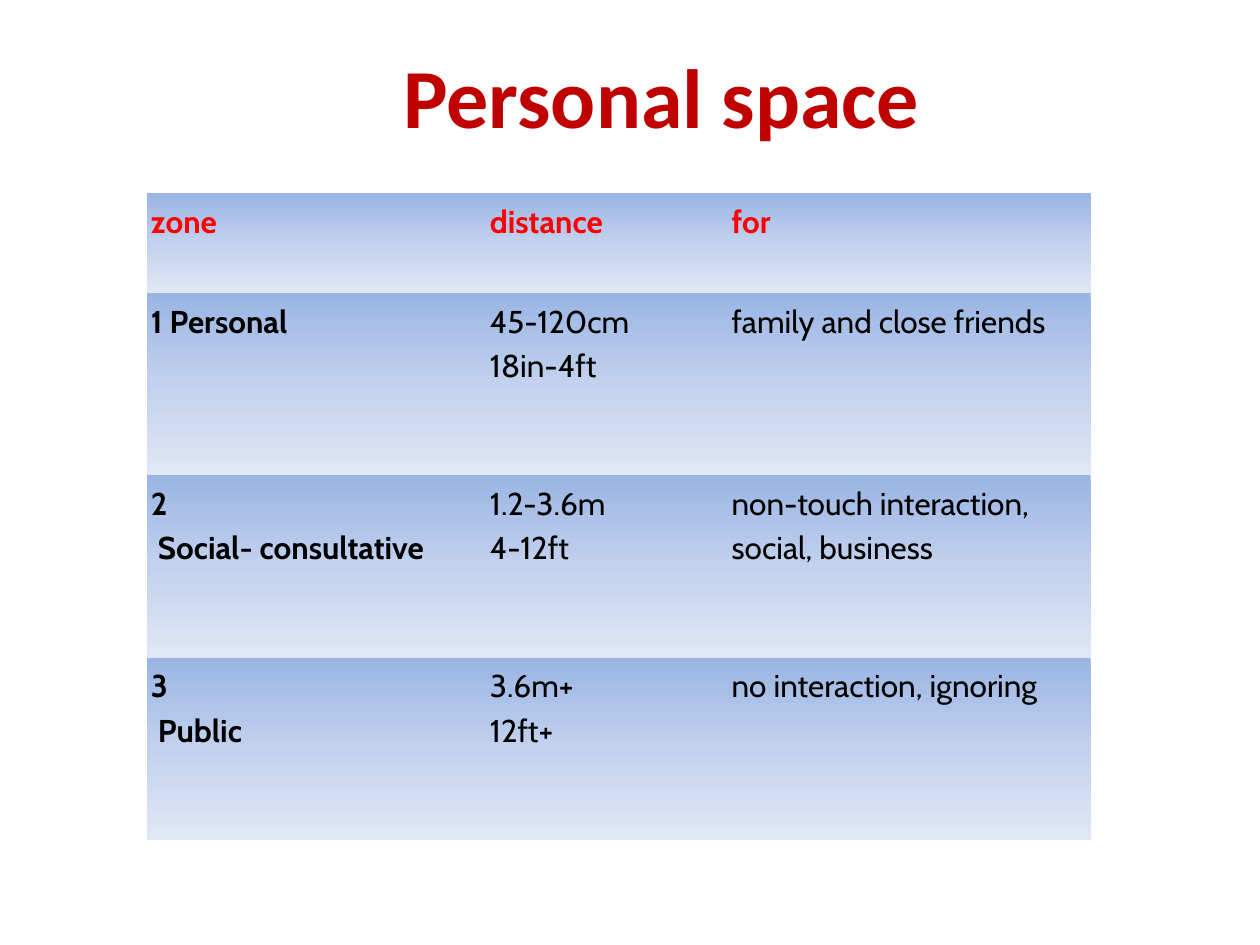
"""Build a slide with a table of personal space zones."""
from dataclasses import dataclass

from lxml import etree
from pptx import Presentation
from pptx.dml.color import RGBColor
from pptx.enum import text
from pptx.oxml import ns
from pptx.util import Pt

DARK_RED = RGBColor(0xC0, 0x00, 0x00)
RED = RGBColor(0xFF, 0x00, 0x00)
BLACK = RGBColor(0x00, 0x00, 0x00)
GRADIENT = (
    (0, RGBColor(0x9A, 0xB5, 0xE4)),
    (50, RGBColor(0xC2, 0xD1, 0xED)),
    (100, RGBColor(0xE1, 0xE8, 0xF5)),
)
COLUMN_WIDTHS = (193.7, 138.2, 207.4)
HEADER_HEIGHT = 57.2
ZONE_HEIGHT = 104.2
CELL_INSET = 2.25


@dataclass(frozen=True)
class Zone:
    name: tuple[str, ...]
    distance: str
    audience: str


ZONES = (
    Zone(("1 Personal",), "45-120cm\n18in-4ft", "family and close friends"),
    Zone(("2", " Social- consultative"), "1.2-3.6m\n4-12ft",
         "non-touch interaction, social, business"),
    Zone(("3", " Public"), "3.6m+\n12ft+", "no interaction, ignoring"),
)


def add_span(para, words: str, font: str, size: float, color: RGBColor, bold: bool) -> None:
    span = para.add_run()
    span.text = words
    span.font.name = font
    span.font.size = Pt(size)
    span.font.bold = bold
    span.font.color.rgb = color


def paint_cell(cell) -> None:
    properties = cell._tc.get_or_add_tcPr()
    for side in ("a:lnL", "a:lnR", "a:lnT", "a:lnB"):
        border = etree.SubElement(properties, ns.qn(side), w="0")
        etree.SubElement(border, ns.qn("a:noFill"))
    gradient = etree.SubElement(properties, ns.qn("a:gradFill"), rotWithShape="1")
    stops = etree.SubElement(gradient, ns.qn("a:gsLst"))
    for percent, color in GRADIENT:
        stop = etree.SubElement(stops, ns.qn("a:gs"), pos=str(percent * 1000))
        etree.SubElement(stop, ns.qn("a:srgbClr"), val=str(color))
    etree.SubElement(gradient, ns.qn("a:lin"), ang="5400000", scaled="0")


def fill_cell(cell, paragraphs: tuple[str, ...], color: RGBColor, bold: bool) -> None:
    cell.margin_left = cell.margin_right = Pt(CELL_INSET)
    cell.margin_top = cell.margin_bottom = Pt(CELL_INSET)
    cell.vertical_anchor = text.MSO_ANCHOR.TOP
    paint_cell(cell)
    frame = cell.text_frame
    for index, words in enumerate(paragraphs):
        para = frame.add_paragraph() if index else frame.paragraphs[0]
        para.line_spacing = 1.15
        for number, line in enumerate(words.split("\n")):
            if number:
                para.add_line_break()
            add_span(para, line, "Cabin", 18, color, bold)


def add_title(page, words: str) -> None:
    box = page.shapes.title
    box.left, box.top, box.width, box.height = Pt(54), Pt(24), Pt(648), Pt(120)
    frame = box.text_frame
    frame.vertical_anchor = text.MSO_ANCHOR.TOP
    frame.margin_top = Pt(1.5)
    para = frame.paragraphs[0]
    para.alignment = text.PP_ALIGN.CENTER
    add_span(para, words, "Calibri", 48, DARK_RED, True)


def add_zone_table(page, headings: tuple[str, ...], zones: tuple[Zone, ...]) -> None:
    heights = (HEADER_HEIGHT,) + (ZONE_HEIGHT,) * len(zones)
    table = page.shapes.add_table(
        len(heights), len(COLUMN_WIDTHS), Pt(84), Pt(110.3),
        Pt(sum(COLUMN_WIDTHS)), Pt(sum(heights))).table
    table.first_row = table.horz_banding = False
    for column, width in zip(table.columns, COLUMN_WIDTHS):
        column.width = Pt(width)
    for row, height in zip(table.rows, heights):
        row.height = Pt(height)
    for index, heading in enumerate(headings):
        fill_cell(table.cell(0, index), (heading,), RED, True)
    for row, zone in enumerate(zones, start=1):
        fill_cell(table.cell(row, 0), zone.name, BLACK, True)
        fill_cell(table.cell(row, 1), (zone.distance,), BLACK, False)
        fill_cell(table.cell(row, 2), (zone.audience,), BLACK, False)


def main() -> None:
    deck = Presentation()
    deck.slide_width, deck.slide_height = Pt(720), Pt(540)
    page = deck.slides.add_slide(deck.slide_layouts[5])
    add_title(page, "Personal space")
    add_zone_table(page, ("zone", "distance", "for"), ZONES)
    deck.save("out.pptx")


if __name__ == "__main__":
    main()
